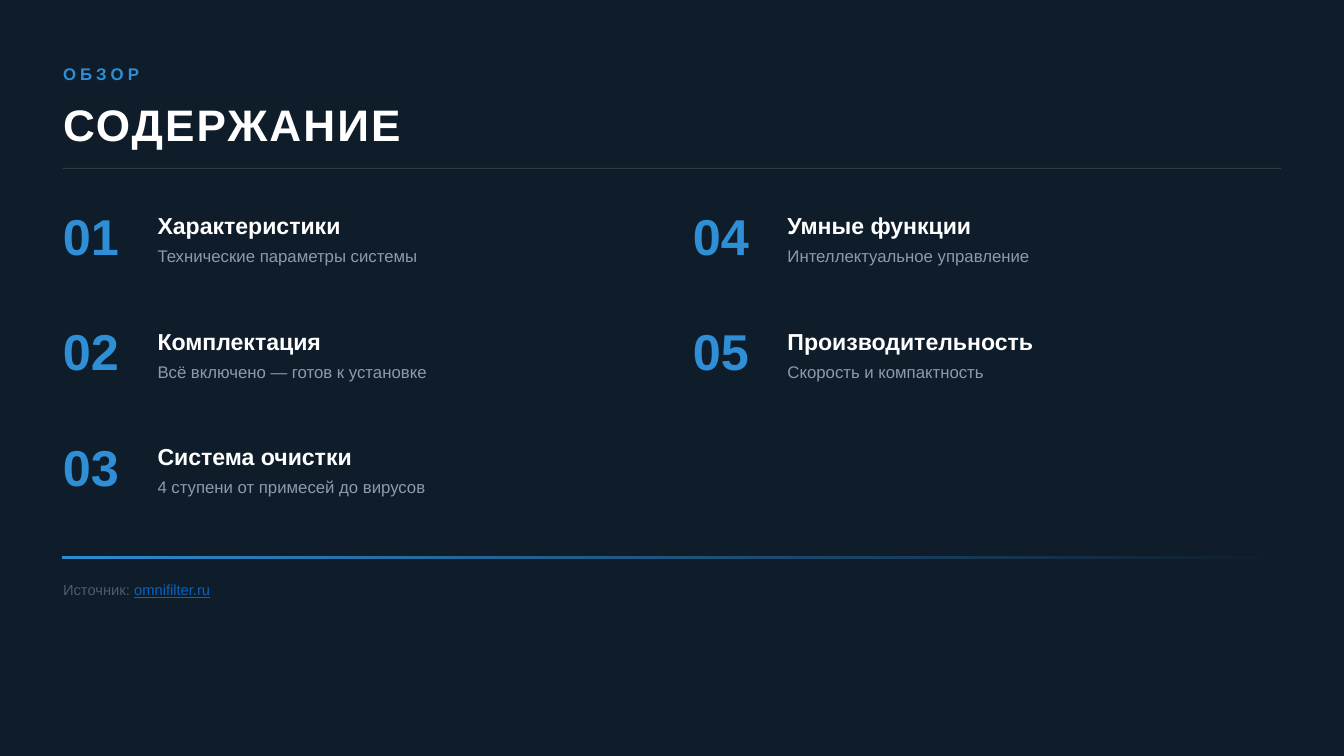
from dataclasses import dataclass

from lxml import etree
from pptx import Presentation
from pptx.dml.color import RGBColor
from pptx.enum import shapes, text
from pptx.oxml.ns import qn
from pptx.util import Pt


@dataclass(frozen=True)
class Theme:
    font: str = "Arial"
    background: str = "0F1D2A"
    accent: str = "2E8FD6"
    white: str = "FFFFFF"
    muted: str = "8A9BAE"
    link: str = "0563C1"
    title_size: int = 42
    number_size: int = 48
    heading_size: int = 22
    body_size: int = 16
    source_size: int = 14


def set_opacity(properties, percent):
    """Apply the opacity to the last RGB colour inside the given XML element."""
    color = list(properties.iter(qn("a:srgbClr")))[-1]
    etree.SubElement(color, qn("a:alpha")).set("val", str(percent * 1000))


class SlideBuilder:
    def __init__(self, slide, theme):
        self.slide = slide
        self.theme = theme
        slide.background.fill.solid()
        slide.background.fill.fore_color.rgb = RGBColor.from_string(theme.background)

    def style_run(self, run, size, color, bold=False, spacing=0, opacity=100):
        run.font.name = self.theme.font
        run.font.size = Pt(size)
        run.font.bold = bold
        run.font.color.rgb = RGBColor.from_string(color)
        properties = run.font._element
        if spacing:
            properties.set("spc", str(spacing * 100))
        if opacity < 100:
            set_opacity(properties, opacity)

    def format_frame(self, frame, anchor):
        frame.margin_left = frame.margin_right = frame.margin_top = frame.margin_bottom = 0
        frame.auto_size = text.MSO_AUTO_SIZE.NONE
        frame.word_wrap = True
        frame.vertical_anchor = anchor

    def title(self, wording, left, top, width, height):
        title = self.slide.shapes.title
        title.left, title.top, title.width, title.height = map(Pt, (left, top, width, height))
        self.format_frame(title.text_frame, text.MSO_ANCHOR.MIDDLE)
        title.text_frame.text = wording
        paragraph = title.text_frame.paragraphs[0]
        paragraph.alignment = text.PP_ALIGN.LEFT
        self.style_run(paragraph.runs[0], self.theme.title_size, self.theme.white, True, 2)

    def label(self, wording, left, top, width, height, size, color,
              anchor=text.MSO_ANCHOR.MIDDLE, **style):
        """Add a one-line text and return its paragraph."""
        box = self.slide.shapes.add_textbox(*map(Pt, (left, top, width, height)))
        self.format_frame(box.text_frame, anchor)
        box.text_frame.text = wording
        paragraph = box.text_frame.paragraphs[0]
        self.style_run(paragraph.runs[0], size, color, **style)
        return paragraph

    def bar(self, left, top, width, height):
        bar = self.slide.shapes.add_shape(
            shapes.MSO_SHAPE.RECTANGLE, *map(Pt, (left, top, width, height)))
        bar.shadow.inherit = False
        bar.line.fill.background()
        return bar

    def divider(self, left, top, width):
        divider = self.bar(left, top, width, 1)
        divider.fill.solid()
        divider.fill.fore_color.rgb = RGBColor.from_string(self.theme.white)
        set_opacity(divider._element.spPr, 13)

    def fading_bar(self, left, top, width):
        fading = self.bar(left, top, width, 2)
        fading.fill.gradient()
        fading.fill.gradient_angle = 0
        for stop, position in zip(fading.fill.gradient_stops, (0, 1)):
            stop.position = position
            stop.color.rgb = RGBColor.from_string(self.theme.accent)
        set_opacity(fading._element.spPr, 0)

    def entry(self, number, heading, summary, left, top):
        theme = self.theme
        self.label(f"{number:02}", left, top, 80, 60, theme.number_size, theme.accent,
                   anchor=text.MSO_ANCHOR.TOP, bold=True)
        self.label(heading, left + 90, top + 5, 400, 30, theme.heading_size, theme.white,
                   bold=True)
        self.label(summary, left + 90, top + 37, 400, 24, theme.body_size, theme.muted)

    def source(self, lead, address, left, top):
        theme = self.theme
        paragraph = self.label(lead, left, top, 600, 24, theme.source_size, theme.muted,
                               opacity=50)
        site = paragraph.add_run()
        site.text = address
        self.style_run(site, theme.source_size, theme.link)
        site.font.underline = True


ENTRIES = [
    ("Характеристики", "Технические параметры системы"),
    ("Комплектация", "Всё включено — готов к установке"),
    ("Система очистки", "4 ступени от примесей до вирусов"),
    ("Умные функции", "Интеллектуальное управление"),
    ("Производительность", "Скорость и компактность"),
]
MARGIN, CONTENT_WIDTH = 60, 1160
FIRST_ROW, ROW_STEP, COLUMN_STEP, ROWS = 195, 110, 600, 3


def main():
    deck = Presentation()
    deck.slide_width, deck.slide_height = Pt(1280), Pt(720)
    title_only = deck.slide_layouts[5]
    theme = Theme()
    contents = SlideBuilder(deck.slides.add_slide(title_only), theme)

    contents.label("ОБЗОР", MARGIN, 55, 300, 30, theme.body_size, theme.accent,
                   bold=True, spacing=4)
    contents.title("СОДЕРЖАНИЕ", MARGIN, 90, 400, 55)
    contents.divider(MARGIN, 160, CONTENT_WIDTH)
    for index, (heading, summary) in enumerate(ENTRIES):
        column, row = divmod(index, ROWS)
        contents.entry(index + 1, heading, summary,
                       MARGIN + column * COLUMN_STEP, FIRST_ROW + row * ROW_STEP)
    contents.fading_bar(MARGIN, 530, CONTENT_WIDTH)
    contents.source("Источник: ", "omnifilter.ru", MARGIN, 550)
    deck.save("out.pptx")


if __name__ == "__main__":
    main()
